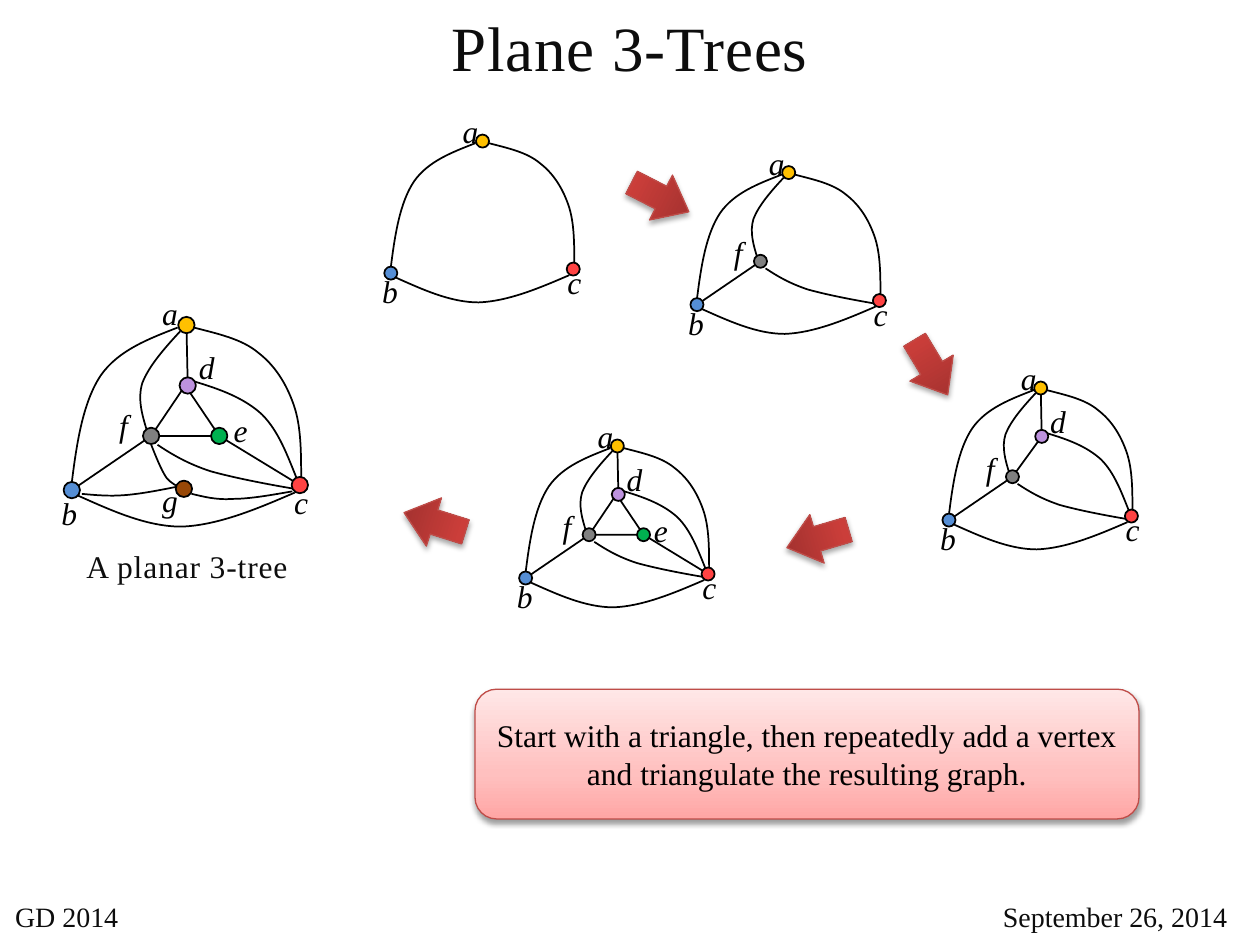
from math import hypot

from lxml import etree
from pptx import Presentation
from pptx.dml.color import RGBColor
from pptx.enum import shapes, text
from pptx.oxml.ns import qn
from pptx.util import Inches, Pt

FONT = "Times New Roman"
BLACK = RGBColor(0, 0, 0)
INK = RGBColor(0x0D, 0x0D, 0x0D)
RED_LINE = RGBColor(0xBF, 0x4C, 0x48)
RED_STOPS = [(0, "9C2F2D"), (80, "CB3E3A"), (100, "CE3B37")]
PINK_STOPS = [(0, "FFA6A5"), (35, "FFC0BF"), (100, "FFE7E7")]

# Full-size graph, in inches from vertex a: name -> (centre, label centre, colour)
VERTICES = {
    "a": ((0, 0), (-.13, -.1), RGBColor(0xFF, 0xC0, 0x00)),
    "b": ((-.91, 1.31), (-.93, 1.49), RGBColor(0x55, 0x8E, 0xD5)),
    "c": ((.9, 1.27), (.91, 1.4), RGBColor(0xFF, 0x43, 0x43)),
    "d": ((.01, .48), (.16, .33), RGBColor(0xBD, 0x92, 0xDE)),
    "e": ((.26, .88), (.43, .83), RGBColor(0x00, 0xB0, 0x50)),
    "f": ((-.28, .88), (-.5, .79), RGBColor(0x80, 0x80, 0x80)),
    "g": ((-.02, 1.3), (-.13, 1.39), RGBColor(0x98, 0x48, 0x07)),
}
STRAIGHT_EDGES = ["ad", "bf", "ce", "df"]
# Start point, then three Bezier points for each section
CURVED_EDGES = {
    "ab": [(-.91, 1.25), (-.87, .93), (-.82, .61), (-.68, .4),
           (-.54, .2), (-.3, .11), (-.07, .02)],
    "ac": [(.06, .02), (.25, .07), (.44, .11), (.57, .22), (.7, .32),
           (.79, .46), (.85, .63), (.91, .8), (.91, 1.01), (.91, 1.23)],
    "bc": [(-.87, 1.35), (-.6, 1.47), (-.32, 1.6), (-.04, 1.6),
           (.25, 1.59), (.56, 1.46), (.86, 1.33)],
    "bg": [(-.83, 1.34), (-.72, 1.35), (-.61, 1.36), (-.49, 1.35),
           (-.36, 1.34), (-.21, 1.31), (-.06, 1.28)],
    "cf": [(.86, 1.3), (.62, 1.26), (.37, 1.21), (.19, 1.16),
           (.01, 1.1), (-.11, 1.03), (-.23, .95)],
    "fg": [(-.28, .95), (-.24, 1.05), (-.2, 1.15), (-.16, 1.21),
           (-.12, 1.26), (-.07, 1.28), (-.03, 1.3)],
    "cg": [(.04, 1.34), (.13, 1.36), (.23, 1.39), (.37, 1.38),
           (.5, 1.38), (.67, 1.35), (.84, 1.32)],
    "af": [(-.31, .85), (-.35, .72), (-.39, .59), (-.35, .46),
           (-.3, .33), (-.18, .19), (-.05, .05)],
    "cd": [(.07, .45), (.27, .51), (.46, .58), (.6, .71),
           (.73, .84), (.8, 1.03), (.88, 1.23)],
}
# Vertices present, position of a, scale
GRAPHS = [
    ("abcdefg", (1.48, 2.58), 1),
    ("abc", (3.83, 1.12), .8),
    ("abcf", (6.26, 1.37), .8),
    ("abcdf", (8.26, 3.08), .8),
    ("abcdef", (4.9, 3.54), .8),
]
DOT, LABEL = .13, (.38, .25)
# Left, top, rotation
STEP_ARROWS = [(5.04, 1.31, 297.1), (7.19, 2.66, 329), (6.29, 4.02, 73.6), (3.25, 3.89, 107.4)]
ARROW_SIZE = (.4, .51)
CALLOUT = "Start with a triangle, then repeatedly add a vertex and triangulate the resulting graph."
FOOTERS = [("GD 2014", 0, 1.54, text.PP_ALIGN.LEFT),
           ("September 26, 2014", 7.7, 2.3, text.PP_ALIGN.CENTER)]

prs = Presentation()
prs.slide_width, prs.slide_height = Inches(10), Inches(7.5)
slide = prs.slides.add_slide(prs.slide_layouts[5])
canvas = slide.shapes


def box(left, top, width, height):
    return [Inches(v) for v in (left, top, width, height)]


def centred(point, width, height):
    return box(point[0] - width / 2, point[1] - height / 2, width, height)


def write(shape, words, size, color=BLACK, align=text.PP_ALIGN.CENTER,
          italic=None, spacing=None, wrap=True):
    frame = shape.text_frame
    frame.word_wrap = wrap
    frame.vertical_anchor = text.MSO_ANCHOR.MIDDLE
    paragraph = frame.paragraphs[0]
    paragraph.alignment = align
    run = paragraph.add_run()
    run.text = words
    run.font.name, run.font.size, run.font.italic = FONT, Pt(size), italic
    run.font.color.rgb = color
    if spacing:
        run.font._element.set("spc", str(int(spacing * 100)))


def outline(shape, fill=None):
    shape.shadow.inherit = False
    shape.line.color.rgb, shape.line.width = BLACK, Pt(1)
    if fill is None:
        shape.fill.background()
    else:
        shape.fill.solid()
        shape.fill.fore_color.rgb = fill


def gloss(shape, stops, opacity):
    """Give a shape an upward gradient, a red line and a soft shadow below."""
    shape.fill.gradient()
    shape.fill.gradient_angle = 90
    shape.line.color.rgb, shape.line.width = RED_LINE, Pt(.75)
    shape.shadow.inherit = False
    properties = shape._element.spPr
    stop_list = properties.find(".//" + qn("a:gsLst"))
    for old in list(stop_list):
        stop_list.remove(old)
    for position, color in stops:
        stop = etree.SubElement(stop_list, qn("a:gs"), pos=str(position * 1000))
        etree.SubElement(stop, qn("a:srgbClr"), val=color)
    shadow = etree.SubElement(properties.find(qn("a:effectLst")), qn("a:outerShdw"),
                              blurRad=str(Pt(3.1)), dist=str(Pt(1.8)),
                              dir="5400000", rotWithShape="0")
    shade = etree.SubElement(shadow, qn("a:srgbClr"), val="000000")
    etree.SubElement(shade, qn("a:alpha"), val=str(opacity * 1000))


def draw_curve(points):
    """Draw one open Bezier outline from a start point and triples of points."""
    builder = canvas.build_freeform(*points[0], scale=Inches(1) / 1000)
    builder.add_line_segments(points[1:], close=False)
    curve = builder.convert_to_shape()
    outline(curve)
    outline_path = curve._element.spPr.find(".//" + qn("a:path"))
    segments = outline_path.findall(qn("a:lnTo"))
    for i in range(0, len(segments), 3):
        bezier = etree.SubElement(outline_path, qn("a:cubicBezTo"))
        for segment in segments[i:i + 3]:
            bezier.append(segment[0])
            outline_path.remove(segment)


def draw_straight(start, end, trim):
    """Join two vertex centres, leaving out the part inside each dot."""
    dx, dy = end[0] - start[0], end[1] - start[1]
    share = trim / hypot(dx, dy)
    edge = canvas.add_connector(
        shapes.MSO_CONNECTOR.STRAIGHT,
        Inches(start[0] + dx * share), Inches(start[1] + dy * share),
        Inches(end[0] - dx * share), Inches(end[1] - dy * share))
    edge.line.color.rgb, edge.line.width = BLACK, Pt(1)
    etree.SubElement(edge._element.spPr, qn("a:effectLst"))


def draw_graph(names, origin, scale):
    def place(point):
        return origin[0] + point[0] * scale, origin[1] + point[1] * scale

    centres = {name: place(VERTICES[name][0]) for name in names}
    for name in names:
        label = canvas.add_textbox(*centred(place(VERTICES[name][1]), *[v * scale for v in LABEL]))
        write(label, name, 18, italic=True, wrap=False)
    if "e" in names:
        (left, base), right, top = centres["f"], centres["e"][0], centres["d"][1]
        outline(canvas.add_shape(shapes.MSO_SHAPE.ISOSCELES_TRIANGLE,
                                 *box(left, top, right - left, base - top)))
    for start, end in STRAIGHT_EDGES:
        covered = start + end == "df" and "e" in names
        if start in names and end in names and not covered:
            draw_straight(centres[start], centres[end], DOT * scale / 2)
    for (start, end), points in CURVED_EDGES.items():
        if start in names and end in names:
            draw_curve([tuple(round(v * 1000) for v in place(p)) for p in points])
    for name in names:
        dot = canvas.add_shape(shapes.MSO_SHAPE.OVAL,
                               *centred(centres[name], DOT * scale, DOT * scale))
        outline(dot, VERTICES[name][2])


for graph in GRAPHS:
    draw_graph(*graph)

title = canvas.title
title.left, title.top, title.width, title.height = box(0, .01, 10, .71)
write(title, "Plane 3-Trees", 36, INK, spacing=.5)

for left, top, rotation in STEP_ARROWS:
    arrow = canvas.add_shape(shapes.MSO_SHAPE.DOWN_ARROW, *box(left, top, *ARROW_SIZE))
    arrow.adjustments[0], arrow.adjustments[1] = .5, .62
    arrow.rotation = rotation
    gloss(arrow, RED_STOPS, 35)

caption = canvas.add_textbox(*box(.54, 4.29, 1.89, .4))
write(caption, "A planar 3-tree", 18, INK, spacing=.5, wrap=False)

callout = canvas.add_shape(shapes.MSO_SHAPE.ROUNDED_RECTANGLE, *box(3.77, 5.47, 5.27, 1.03))
gloss(callout, PINK_STOPS, 38)
write(callout, CALLOUT, 18)

for words, left, width, align in FOOTERS:
    footer = canvas.add_shape(shapes.MSO_SHAPE.ROUNDED_RECTANGLE, *box(left, 7.05, width, .45))
    footer.shadow.inherit = False
    footer.fill.background()
    footer.line.fill.background()
    write(footer, words, 16, INK, align)

prs.save("out.pptx")
